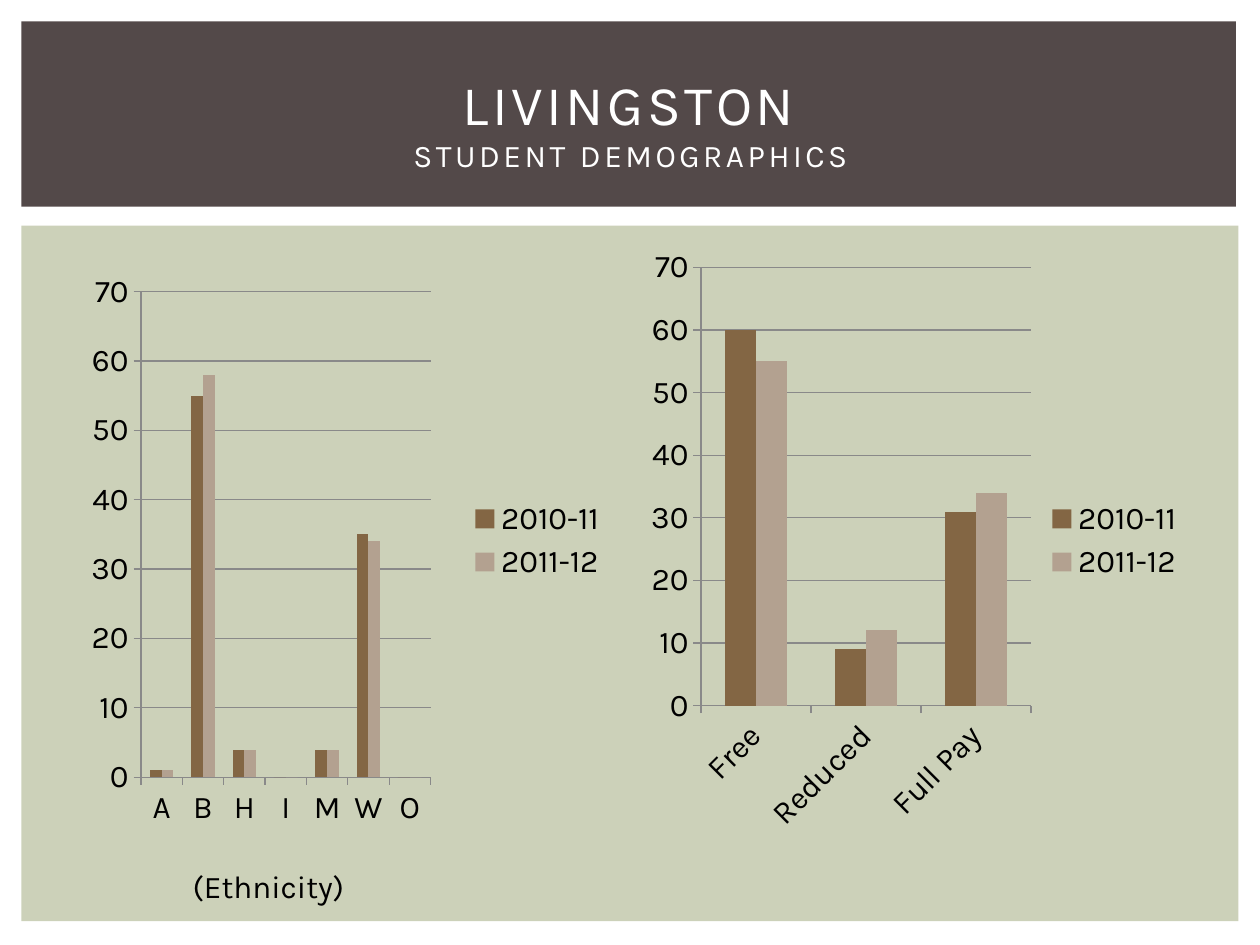
import pptx
import pptx.chart.data
import pptx.dml.color
import pptx.enum.chart
import pptx.enum.shapes
import pptx.enum.text
import pptx.oxml
import pptx.util
from pptx.util import Inches

COLORS = {
    "panel": "CCD1B9",
    "banner": "534949",
    "light": "FFFFFF",
    "dark": "000000",
    "grid": "898989",
    "2010-11": "836644",
    "2011-12": "B3A190",
}


class DemographicsSlide:
    """Holds the style and the current slide, and adds each kind of element."""

    font_name = "Karla"
    body_size = 18

    def __init__(self, deck):
        self.slide = deck.slides.add_slide(deck.slide_layouts[6])

    def color(self, key):
        return pptx.dml.color.RGBColor.from_string(COLORS[key])

    def style_font(self, font, size, key):
        font.name = self.font_name
        font.size = pptx.util.Pt(size)
        font.color.rgb = self.color(key)

    def panel(self, box, key):
        rectangle = self.slide.shapes.add_shape(
            pptx.enum.shapes.MSO_SHAPE.RECTANGLE, *map(Inches, box))
        rectangle.shadow.inherit = False
        rectangle.fill.solid()
        rectangle.fill.fore_color.rgb = self.color(key)
        rectangle.line.fill.background()

    def text(self, box, wording, sizes, key, spacing=0, grow=False):
        textbox = self.slide.shapes.add_textbox(*map(Inches, box))
        frame = textbox.text_frame
        frame.word_wrap = True
        if grow:
            frame.auto_size = pptx.enum.text.MSO_AUTO_SIZE.SHAPE_TO_FIT_TEXT
        else:
            frame.vertical_anchor = pptx.enum.text.MSO_ANCHOR.MIDDLE
        paragraph = frame.paragraphs[0]
        paragraph.text = wording
        paragraph.alignment = pptx.enum.text.PP_ALIGN.CENTER
        for run, size in zip(paragraph.runs, sizes):
            self.style_font(run.font, size, key)
            if spacing:
                run.font._element.set("spc", str(spacing * 100))

    def column_chart(self, box, categories, series, plot_area=None):
        data = pptx.chart.data.CategoryChartData()
        data.categories = categories
        for year, percents in series.items():
            data.add_series(year, percents)
        chart = self.slide.shapes.add_chart(
            pptx.enum.chart.XL_CHART_TYPE.COLUMN_CLUSTERED,
            *map(Inches, box), data).chart
        self.style_font(chart.font, self.body_size, "dark")
        chart.has_title = False
        chart.has_legend = True
        chart.legend.position = pptx.enum.chart.XL_LEGEND_POSITION.RIGHT
        chart.legend.include_in_layout = False
        plot = chart.plots[0]
        plot.gap_width = 150
        plot.overlap = 0
        plot.vary_by_categories = False
        for column in plot.series:
            column.format.fill.solid()
            column.format.fill.fore_color.rgb = self.color(column.name)
        percent_axis = chart.value_axis
        percent_axis.minimum_scale = 0
        percent_axis.maximum_scale = 70
        percent_axis.major_unit = 10
        percent_axis.has_major_gridlines = True
        for axis in (chart.category_axis, percent_axis):
            axis.major_tick_mark = pptx.enum.chart.XL_TICK_MARK.OUTSIDE
            axis.format.line.color.rgb = self.color("grid")
        percent_axis.major_gridlines.format.line.color.rgb = self.color("grid")
        if plot_area:
            self.place_plot(chart, plot_area)

    def place_plot(self, chart, plot_area):
        area = chart._chartSpace.chart.plotArea
        for automatic in area.xpath("c:layout"):
            area.remove(automatic)
        settings = [("layoutTarget", "inner"), ("xMode", "edge"), ("yMode", "edge")]
        settings += zip("xywh", plot_area)
        parts = "".join(f'<c:{tag} val="{value}"/>' for tag, value in settings)
        namespace = "http://schemas.openxmlformats.org/drawingml/2006/chart"
        area.insert(0, pptx.oxml.parse_xml(
            f'<c:layout xmlns:c="{namespace}"><c:manualLayout>{parts}'
            "</c:manualLayout></c:layout>"))


def main():
    deck = pptx.Presentation()
    deck.slide_width, deck.slide_height = Inches(10), Inches(7.5)
    page = DemographicsSlide(deck)
    page.panel((0.17, 1.79, 9.66, 5.52), "panel")
    page.panel((0.17, 0.17, 9.64, 1.47), "banner")
    page.column_chart(
        (0.5, 1.88, 4.42, 4.82), list("ABHIMWO"),
        {"2010-11": (1, 55, 4, 0, 4, 35, 0), "2011-12": (1, 58, 4, 0, 4, 34, 0)},
        plot_area=(0.14, 0.09, 0.52, 0.8))
    page.column_chart(
        (5.08, 1.88, 4.42, 4.82), ["Free", "Reduced", "Full Pay"],
        {"2010-11": (60, 9, 31), "2011-12": (55, 12, 34)})
    page.text((0.42, 0.39, 9.17, 1.15), "LIVINGSTON\vSTUDENT DEMOGRAPHICS",
              (32, 18), "light", spacing=2)
    page.text((0.67, 6.83, 2.92, 0.4), "(Ethnicity)", (18,), "dark", grow=True)
    deck.save("out.pptx")


if __name__ == "__main__":
    main()
